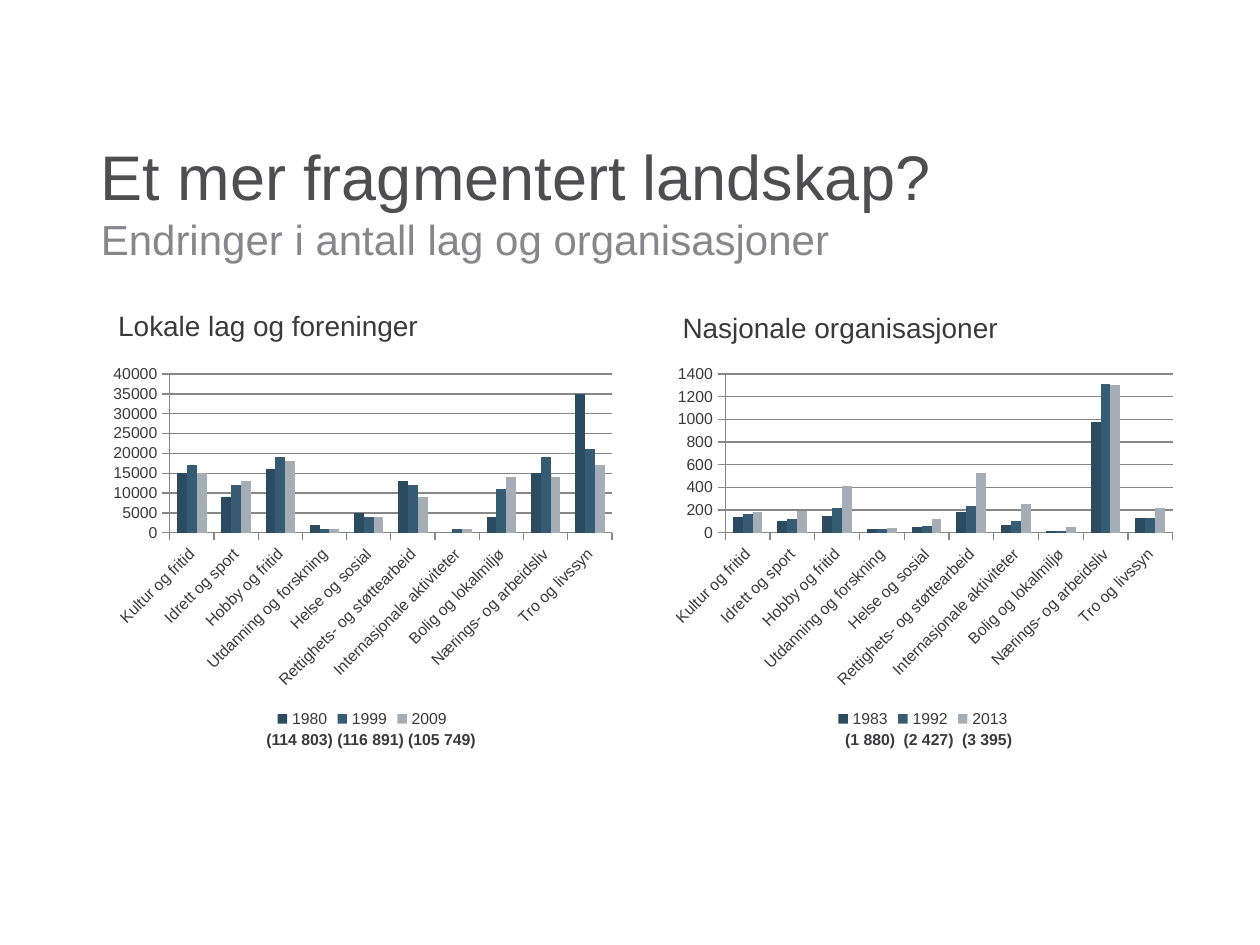
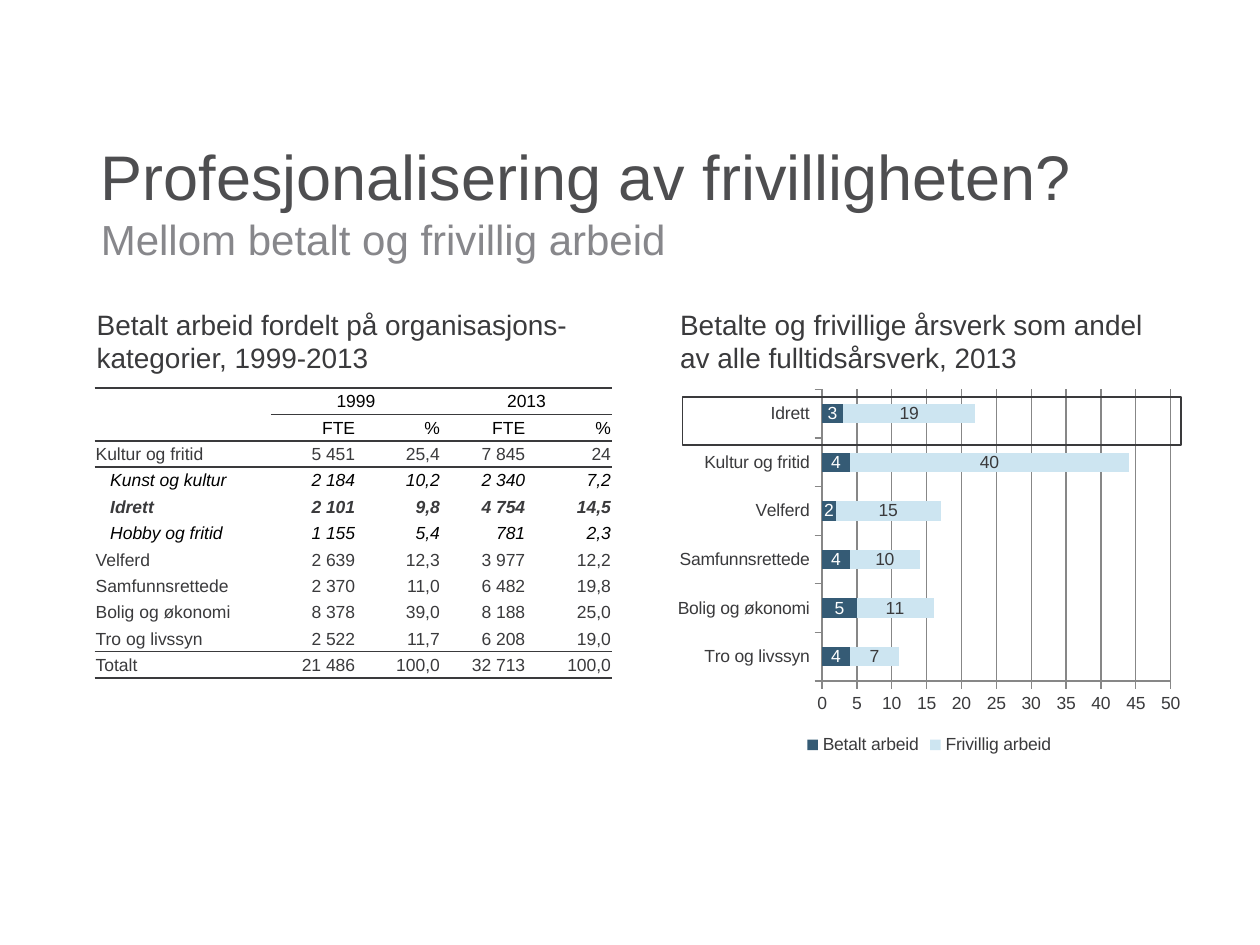
from dataclasses import dataclass

from lxml import etree
from pptx import Presentation
from pptx.chart.data import CategoryChartData
from pptx.dml.color import RGBColor
from pptx.enum.chart import XL_CHART_TYPE, XL_LABEL_POSITION, XL_LEGEND_POSITION, XL_TICK_MARK
from pptx.enum.shapes import MSO_SHAPE
from pptx.enum.text import MSO_ANCHOR, MSO_AUTO_SIZE, PP_ALIGN
from pptx.oxml.ns import qn
from pptx.util import Pt

COLUMNS = XL_CHART_TYPE.COLUMN_CLUSTERED
STACKED_BARS = XL_CHART_TYPE.BAR_STACKED
LABEL_CENTER = XL_LABEL_POSITION.CENTER
LEGEND_BOTTOM = XL_LEGEND_POSITION.BOTTOM
TICK_OUT = XL_TICK_MARK.OUTSIDE
RECTANGLE = MSO_SHAPE.RECTANGLE
MIDDLE, TOP = MSO_ANCHOR.MIDDLE, MSO_ANCHOR.TOP
NO_FIT, GROW = MSO_AUTO_SIZE.NONE, MSO_AUTO_SIZE.SHAPE_TO_FIT_TEXT
LEFT, CENTER, RIGHT = PP_ALIGN.LEFT, PP_ALIGN.CENTER, PP_ALIGN.RIGHT
TITLE_ONLY = 5
PLAIN_TABLE_STYLE = "{2D5ABB26-0587-4C30-8999-92F81FD0307C}"


@dataclass(frozen=True)
class Theme:
    """Colours, font and type sizes shared by the slides."""
    font: str = "Arial"
    title: str = "4E4E50"
    subtitle: str = "87878B"
    text: str = "3A3A3C"
    black: str = "000000"
    white: str = "FFFFFF"
    grid: str = "878787"
    years: tuple = ("2A4B60", "355B75", "A5AEB6")
    work: tuple = ("355B75", "CDE5F1")
    title_size: float = 36
    subtitle_size: float = 24
    heading_size: float = 16
    table_size: float = 10
    small_size: float = 9


@dataclass(frozen=True)
class Box:
    """A rectangle in points."""
    left: float
    top: float
    width: float
    height: float

    def inner(self, dx, dy, width, height):
        """Return a box placed relative to this one."""
        return Box(self.left + dx, self.top + dy, width, height)

    def lengths(self):
        """Return left, top, width and height as lengths."""
        return [Pt(value) for value in (self.left, self.top, self.width, self.height)]


THEME = Theme()
TITLE_BOX = Box(50.4, 69.8, 582.5, 90)

ORGANISATION_FIELDS = [
    "Kultur og fritid", "Idrett og sport", "Hobby og fritid", "Utdanning og forskning",
    "Helse og sosial", "Rettighets- og støttearbeid", "Internasjonale aktiviteter",
    "Bolig og lokalmiljø", "Nærings- og arbeidsliv", "Tro og livssyn",
]
LOCAL_COUNTS = {
    "1980": [15000, 9000, 16000, 2000, 5000, 13000, 0, 4000, 15000, 35000],
    "1999": [17000, 12000, 19000, 1000, 4000, 12000, 1000, 11000, 19000, 21000],
    "2009": [15000, 13000, 18000, 1000, 4000, 9000, 1000, 14000, 14000, 17000],
}
NATIONAL_COUNTS = {
    "1983": [140, 100, 150, 30, 50, 180, 70, 20, 980, 130],
    "1992": [170, 120, 220, 30, 60, 240, 100, 20, 1310, 130],
    "2013": [180, 190, 410, 40, 120, 530, 250, 50, 1300, 220],
}
WORK_FIELDS = ["Tro og livssyn", "Bolig og økonomi", "Samfunnsrettede",
               "Velferd", "Kultur og fritid", "Idrett"]
WORK_SHARES = {"Betalt arbeid": [4, 5, 4, 2, 4, 3],
               "Frivillig arbeid": [7, 11, 10, 15, 40, 19]}
PAID_WORK = [
    ["", "1999", "", "2013", ""],
    ["", "FTE", "%", "FTE", "%"],
    ["Kultur og fritid", "5 451", "25,4", "7 845", "24"],
    ["Kunst og kultur", "2 184", "10,2", "2 340", "7,2"],
    ["Idrett", "2 101", "9,8", "4 754", "14,5"],
    ["Hobby og fritid", "1 155", "5,4", "781", "2,3"],
    ["Velferd", "2 639", "12,3", "3 977", "12,2"],
    ["Samfunnsrettede", "2 370", "11,0", "6 482", "19,8"],
    ["Bolig og økonomi", "8 378", "39,0", "8 188", "25,0"],
    ["Tro og livssyn", "2 522", "11,7", "6 208", "19,0"],
    ["Totalt", "21 486", "100,0", "32 713", "100,0"],
]
HEADER_ROWS = (0, 1)
SUBCATEGORY_ROWS = (3, 4, 5)
EMPHASIS_ROW = 4
RULE_START_COLUMNS = {0: 0, 1: 1, 2: 0, 10: 0, 11: 0}


def rgb(value):
    """Turn a hex string into a colour."""
    return RGBColor.from_string(value)


def write_text(paragraph, text, size=THEME.heading_size, color=THEME.text,
               bold=False, italic=False, align=LEFT):
    """Append a formatted run to a paragraph."""
    paragraph.alignment = align
    run = paragraph.add_run()
    run.text = text
    font = run.font
    font.name, font.size, font.bold, font.italic = THEME.font, Pt(size), bold, italic
    font.color.rgb = rgb(color)


def add_text(slide, box, text, tab_step=None, **style):
    """Add a wrapping text box, with tab stops at equal steps if asked."""
    frame = slide.shapes.add_textbox(*box.lengths()).text_frame
    frame.word_wrap = True
    frame.auto_size = GROW
    frame.vertical_anchor = TOP
    paragraph = frame.paragraphs[0]
    if tab_step:
        tabs = etree.SubElement(paragraph._p.get_or_add_pPr(), qn("a:tabLst"))
        for number in range(1, text.count("\t") + 1):
            etree.SubElement(tabs, qn("a:tab"), pos=str(Pt(tab_step * number)), algn="l")
    write_text(paragraph, text, **style)


def add_titled_slide(prs, title, subtitle):
    """Add a slide with a two-line title."""
    slide = prs.slides.add_slide(prs.slide_layouts[TITLE_ONLY])
    holder = slide.shapes.title
    holder.left, holder.top, holder.width, holder.height = TITLE_BOX.lengths()
    frame = holder.text_frame
    frame.word_wrap = True
    frame.auto_size = NO_FIT
    frame.vertical_anchor = MIDDLE
    paragraph = frame.paragraphs[0]
    write_text(paragraph, title, size=THEME.title_size, color=THEME.title)
    paragraph.add_line_break()
    line_break = paragraph._p.find(qn("a:br"))
    etree.SubElement(line_break, qn("a:rPr"), sz=str(THEME.title_size * 100))
    write_text(paragraph, subtitle, size=THEME.subtitle_size, color=THEME.subtitle)
    return slide


def set_plot_area(chart, area):
    """Fix the inner plot area as fractions of the chart."""
    plot_area = chart._chartSpace.chart.plotArea
    layout = plot_area.find(qn("c:layout"))
    if layout is None:
        layout = etree.Element(qn("c:layout"))
        plot_area.insert(0, layout)
    manual = etree.SubElement(layout, qn("c:manualLayout"))
    settings = [("layoutTarget", "inner"), ("xMode", "edge"), ("yMode", "edge")]
    for tag, value in settings + list(zip("xywh", area)):
        etree.SubElement(manual, qn(f"c:{tag}"), val=str(value))


def add_bar_chart(slide, box, kind, categories, series, colors, size, top_value, step, area):
    """Add a bar or column chart with the shared axis and legend style."""
    data = CategoryChartData(number_format="0")
    data.categories = categories
    for name, values in series.items():
        data.add_series(name, values)
    chart = slide.shapes.add_chart(kind, *box.lengths(), data).chart
    chart.has_title = False
    chart.font.name, chart.font.size = THEME.font, Pt(size)
    chart.font.color.rgb = rgb(THEME.text)
    chart.has_legend = True
    chart.legend.position = LEGEND_BOTTOM
    chart.legend.include_in_layout = False
    plot = chart.plots[0]
    plot.gap_width = 150
    plot.vary_by_categories = False
    for item, color in zip(plot.series, colors):
        item.invert_if_negative = False
        item.format.fill.solid()
        item.format.fill.fore_color.rgb = rgb(color)
    scale = chart.value_axis
    scale.minimum_scale, scale.maximum_scale, scale.major_unit = 0, top_value, step
    scale.has_major_gridlines = True
    for axis in (scale, chart.category_axis):
        axis.major_tick_mark = TICK_OUT
    for part in (scale, chart.category_axis, scale.major_gridlines):
        part.format.line.color.rgb = rgb(THEME.grid)
        part.format.line.width = Pt(0.75)
    set_plot_area(chart, area)
    return chart


def add_count_panel(slide, box, heading, heading_offset, counts, top_value, step, area,
                    totals, totals_offset, **totals_style):
    """Add a heading, a column chart and the totals under its legend."""
    add_text(slide, box.inner(*heading_offset, 280.8, 26.6), heading)
    chart = add_bar_chart(slide, box.inner(0, 30.2, box.width, 216), COLUMNS,
                          ORGANISATION_FIELDS, counts, THEME.years, THEME.small_size,
                          top_value, step, area)
    labels = chart.category_axis.tick_labels
    labels.font.size = Pt(THEME.small_size)
    chart.category_axis._element.find(qn("c:txPr")).find(qn("a:bodyPr")).set("rot", "-2700000")
    add_text(slide, box.inner(totals_offset, 240.5, 156.2, 18), totals,
             size=THEME.small_size, bold=True, **totals_style)


def add_share_panel(slide, box):
    """Add the heading, stacked bars and the frame around the sports bar."""
    add_text(slide, box.inner(0, 0, 280.8, 46),
             "Betalte og frivillige årsverk som andel av alle fulltidsårsverk, 2013")
    chart = add_bar_chart(slide, box.inner(0, 46.1, box.width, 216), STACKED_BARS,
                          WORK_FIELDS, WORK_SHARES, THEME.work, THEME.table_size,
                          50, 5, (0.295, 0.02, 0.667, 0.772))
    plot = chart.plots[0]
    plot.overlap = 100
    for series, color in zip(plot.series, (THEME.white, THEME.text)):
        labels = series.data_labels
        labels.show_value = True
        labels.number_format, labels.number_format_is_linked = "0", False
        labels.position = LABEL_CENTER
        labels.font.size = Pt(THEME.table_size)
        labels.font.color.rgb = rgb(color)
    frame = slide.shapes.add_shape(RECTANGLE, *box.inner(8.4, 54.7, 285.1, 27.4).lengths())
    frame.shadow.inherit = False
    frame.fill.background()
    frame.line.color.rgb = rgb(THEME.text)
    frame.line.width = Pt(1)


def rule_cell(cell, row, column):
    """Draw the horizontal rules that touch a cell."""
    properties = cell._tc.get_or_add_tcPr()
    for tag, boundary in (("a:lnT", row), ("a:lnB", row + 1)):
        if column >= RULE_START_COLUMNS.get(boundary, len(PAID_WORK)):
            line = etree.SubElement(properties, qn(tag), w=str(Pt(1)))
            fill = etree.SubElement(line, qn("a:solidFill"))
            etree.SubElement(fill, qn("a:srgbClr"), val=THEME.text)


def fill_cell(cell, text, row, column):
    """Write and format one table cell."""
    subcategory, emphasis = row in SUBCATEGORY_ROWS, row == EMPHASIS_ROW
    indent = 8.3 if subcategory and column == 0 else 0
    cell.margin_left = Pt(0.7 + indent)
    cell.margin_right = cell.margin_top = Pt(0.7)
    cell.margin_bottom = 0
    cell.vertical_anchor = MIDDLE
    rule_cell(cell, row, column)
    cell.fill.background()
    paragraph = cell.text_frame.paragraphs[0]
    if text:
        black = row in HEADER_ROWS or (subcategory and not emphasis)
        align = CENTER if row == 0 else RIGHT if column else LEFT
        write_text(paragraph, text, size=THEME.table_size, bold=emphasis, italic=subcategory,
                   color=THEME.black if black else THEME.text, align=align)
    else:
        etree.SubElement(paragraph._p, qn("a:endParaRPr"), sz=str(THEME.table_size * 100))


def add_paid_work_panel(slide, box):
    """Add the heading and the table of paid work."""
    add_text(slide, box.inner(0, 0, box.width, 46),
             "Betalt arbeid fordelt på organisasjons-kategorier, 1999-2013")
    widths = [100.8, 48.8, 48.4, 48.8, 49]
    place = box.inner(5.8, 49.7, sum(widths), 165.6)
    table = slide.shapes.add_table(len(PAID_WORK), len(widths), *place.lengths()).table
    table.first_row = table.horz_banding = False
    table._tbl.tblPr.find(qn("a:tableStyleId")).text = PLAIN_TABLE_STYLE
    for column, width in zip(table.columns, widths):
        column.width = Pt(width)
    for r, values in enumerate(PAID_WORK):
        table.rows[r].height = Pt(place.height / len(PAID_WORK))
        for c, text in enumerate(values):
            fill_cell(table.cell(r, c), text, r, c)
    for first in (1, 3):
        table.cell(0, first).merge(table.cell(0, first + 1))


def main():
    """Build both slides and save them."""
    prs = Presentation()
    prs.slide_width, prs.slide_height = Pt(720), Pt(540)

    landscape = add_titled_slide(prs, "Et mer fragmentert landskap?",
                                 "Endringer i antall lag og organisasjoner")
    add_count_panel(landscape, Box(58.3, 172.8, 297.4, 246.2), "Lokale lag og foreninger",
                    (2.2, 0), LOCAL_COUNTS, 40000, 5000, (0.13, 0.05, 0.85, 0.42),
                    "(114 803) (116 891) (105 749)", 75.6, align=CENTER)
    add_count_panel(landscape, Box(378.7, 172.8, 297.4, 246.2), "Nasjonale organisasjoner",
                    (4.3, 1.4), NATIONAL_COUNTS, 1400, 200, (0.12, 0.05, 0.86, 0.42),
                    "(1 880)\t(2 427)\t(3 395)", 97.2, tab_step=33.4)

    work = add_titled_slide(prs, "Profesjonalisering av frivilligheten?",
                            "Mellom betalt og frivillig arbeid")
    add_paid_work_panel(work, Box(48.2, 172.1, 296.6, 215.3))
    add_share_panel(work, Box(381.6, 172.1, 298.8, 262.1))
    prs.save("out.pptx")


if __name__ == "__main__":
    main()
